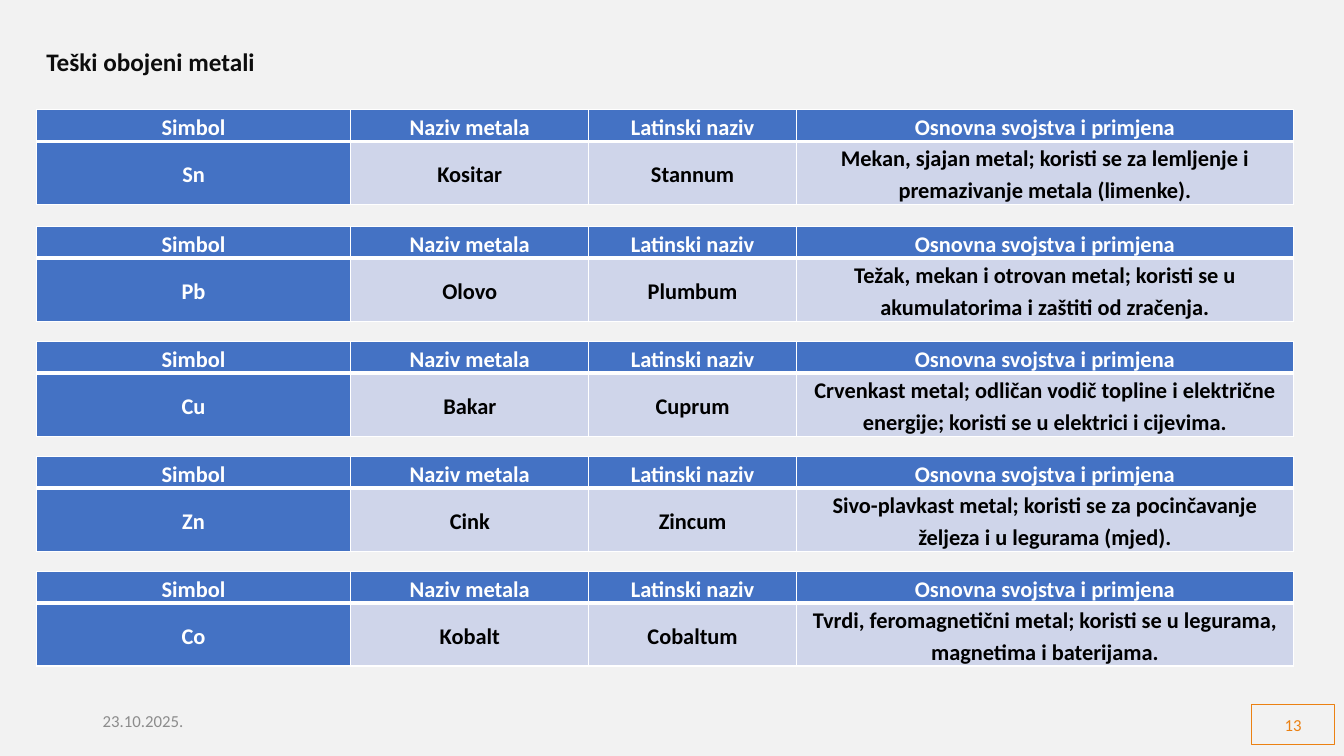
from lxml import etree
from pptx import Presentation
from pptx.dml.color import RGBColor
from pptx.enum.shapes import MSO_SHAPE
from pptx.enum.text import MSO_ANCHOR, MSO_AUTO_SIZE, PP_ALIGN
from pptx.oxml.ns import qn
from pptx.util import Inches, Pt

RECTANGLE = MSO_SHAPE.RECTANGLE
MIDDLE, TOP = MSO_ANCHOR.MIDDLE, MSO_ANCHOR.TOP
LEFT, CENTER = PP_ALIGN.LEFT, PP_ALIGN.CENTER
NO_AUTOFIT = MSO_AUTO_SIZE.NONE
TITLE_ONLY = 5

FONT = "Calibri"
BACKGROUND, WHITE, BLACK = "F2F2F2", "FFFFFF", "000000"
BLUE, PALE_BLUE = "4472C4", "CFD5EA"
ORANGE, GREY, TITLE_COLOR = "EB8113", "8C8C8C", "0D0D0D"

TABLE_LEFT = 0.36
COLUMN_WIDTHS = [3.12, 2.36, 2.06, 4.93]
ROW_HEIGHTS = [0.31, 0.61]
HEADERS = ["Simbol", "Naziv metala", "Latinski naziv", "Osnovna svojstva i primjena"]
METALS = [
    (1.09, ["Sn", "Kositar", "Stannum",
            "Mekan, sjajan metal; koristi se za lemljenje i premazivanje metala (limenke)."]),
    (2.25, ["Pb", "Olovo", "Plumbum",
            "Težak, mekan i otrovan metal; koristi se u akumulatorima i zaštiti od zračenja."]),
    (3.39, ["Cu", "Bakar", "Cuprum",
            "Crvenkast metal; odličan vodič topline i električne energije; "
            "koristi se u elektrici i cijevima."]),
    (4.53, ["Zn", "Cink", "Zincum",
            "Sivo-plavkast metal; koristi se za pocinčavanje željeza i u legurama (mjed)."]),
    (5.67, ["Co", "Kobalt", "Cobaltum",
            "Tvrdi, feromagnetični metal; koristi se u legurama, magnetima i baterijama."]),
]


def rgb(color):
    return RGBColor.from_string(color)


def write(frame, text, size, color, bold=False, align=LEFT):
    """Set the text of a frame as one formatted paragraph and return it."""
    frame.text = text
    para = frame.paragraphs[0]
    para.alignment = align
    font = para.runs[0].font
    font.name, font.size, font.bold = FONT, Pt(size), bold
    font.color.rgb = rgb(color)
    return para


def add_title(slide, text):
    title = slide.shapes.title
    title.left, title.top = Inches(TABLE_LEFT), Inches(0.41)
    title.width, title.height = Inches(2.28), Inches(0.4)
    frame = title.text_frame
    write(frame, text, 18, TITLE_COLOR, bold=True)
    frame.auto_size = NO_AUTOFIT
    frame.word_wrap = False
    frame.vertical_anchor = TOP


def add_date(slide, text):
    box = slide.shapes.add_textbox(Inches(0.92), Inches(6.95), Inches(3), Inches(0.4))
    frame = box.text_frame
    frame.word_wrap = True
    frame.vertical_anchor = MIDDLE
    write(frame, text, 12, GREY)


def add_page_number(slide, text):
    box = slide.shapes.add_shape(
        RECTANGLE, Inches(12.41), Inches(6.99), Inches(0.83), Inches(0.4))
    box.shadow.inherit = False
    box.fill.background()
    box.line.color.rgb = rgb(ORANGE)
    box.line.width = Pt(0.75)
    box.text_frame.vertical_anchor = MIDDLE
    write(box.text_frame, text, 12, ORANGE, align=CENTER)


def set_borders(cell, bottom_width):
    properties = cell._tc.get_or_add_tcPr()
    widths = {"a:lnL": 1, "a:lnR": 1, "a:lnT": 1, "a:lnB": bottom_width}
    for tag, width in widths.items():
        line = etree.SubElement(properties, qn(tag), w=str(Pt(width)))
        fill = etree.SubElement(line, qn("a:solidFill"))
        etree.SubElement(fill, qn("a:srgbClr"), val=WHITE)


def fill_cell(cell, text, heading, bottom_width):
    set_borders(cell, bottom_width)
    cell.fill.solid()
    cell.fill.fore_color.rgb = rgb(BLUE if heading else PALE_BLUE)
    cell.margin_left = cell.margin_right = Inches(0.07)
    cell.margin_top = cell.margin_bottom = 0
    cell.vertical_anchor = MIDDLE
    para = write(cell.text_frame, text, 16, WHITE if heading else BLACK,
                 bold=True, align=CENTER)
    para.line_spacing = 1.15
    para.space_after = Pt(10)


def add_metal_table(slide, top, values):
    rows = [HEADERS, values]
    table = slide.shapes.add_table(
        len(rows), len(HEADERS), Inches(TABLE_LEFT), Inches(top),
        Inches(sum(COLUMN_WIDTHS)), Inches(sum(ROW_HEIGHTS))).table
    for column, width in zip(table.columns, COLUMN_WIDTHS):
        column.width = Inches(width)
    for r, texts in enumerate(rows):
        table.rows[r].height = Inches(ROW_HEIGHTS[r])
        for c, text in enumerate(texts):
            fill_cell(table.cell(r, c), text, heading=r == 0 or c == 0,
                      bottom_width=3 if r == 0 else 1)


def main():
    deck = Presentation()
    deck.slide_width, deck.slide_height = Inches(13.33), Inches(7.5)
    slide = deck.slides.add_slide(deck.slide_layouts[TITLE_ONLY])
    slide.background.fill.solid()
    slide.background.fill.fore_color.rgb = rgb(BACKGROUND)
    add_title(slide, "Teški obojeni metali")
    for top, values in METALS:
        add_metal_table(slide, top, values)
    add_date(slide, "23.10.2025.")
    add_page_number(slide, "13")
    deck.save("out.pptx")


if __name__ == "__main__":
    main()
